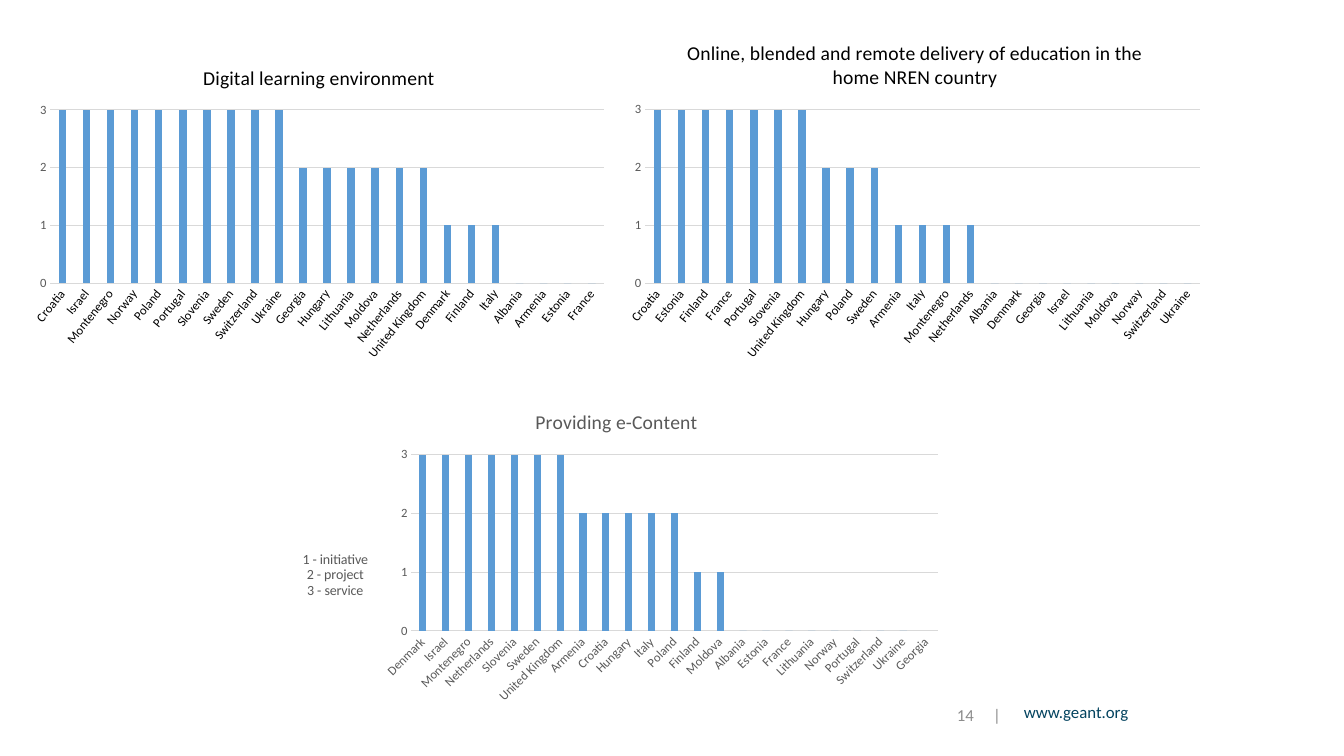
"""Build a slide with three country charts on education services and a footer."""
from lxml import etree
from pptx import Presentation
from pptx.chart.data import CategoryChartData
from pptx.dml.color import RGBColor
from pptx.enum.chart import XL_CHART_TYPE, XL_TICK_MARK
from pptx.enum.text import MSO_ANCHOR, PP_ALIGN
from pptx.oxml.ns import qn
from pptx.util import Inches, Pt

COLUMNS = XL_CHART_TYPE.COLUMN_CLUSTERED
NO_TICK = XL_TICK_MARK.NONE
TOP, MIDDLE = MSO_ANCHOR.TOP, MSO_ANCHOR.MIDDLE
LEFT, RIGHT = PP_ALIGN.LEFT, PP_ALIGN.RIGHT
BLACK = RGBColor(0x00, 0x00, 0x00)
GRAY = RGBColor(0x59, 0x59, 0x59)
GRID = RGBColor(0xD9, 0xD9, 0xD9)
BLUE = RGBColor(0x5B, 0x9B, 0xD5)
NAVY = RGBColor(0x03, 0x43, 0x5F)
FOOTER_GRAY = RGBColor(0x8C, 0x8C, 0x8C)
FONT = "Calibri"
MAX_LEVEL = 3

CHARTS = [
    {
        "title": "Digital learning environment",
        "box": (0.21, 0.49, 5.91, 3.15),
        "plot": (0.5, 1.09, 5.49, 1.72),
        "color": BLACK,
        "angle": -51,
        "levels": [
            (3, "Croatia, Israel, Montenegro, Norway, Poland, Portugal, Slovenia, "
                "Sweden, Switzerland, Ukraine"),
            (2, "Georgia, Hungary, Lithuania, Moldova, Netherlands, United Kingdom"),
            (1, "Denmark, Finland, Italy"),
            (0, "Albania, Armenia, Estonia, France"),
        ],
    },
    {
        "title": "Online, blended and remote delivery of education in the home NREN country",
        "box": (6.12, 0.23, 5.91, 3.41),
        "plot": (6.4, 1.09, 5.5, 1.72),
        "color": BLACK,
        "angle": -51,
        "levels": [
            (3, "Croatia, Estonia, Finland, France, Portugal, Slovenia, United Kingdom"),
            (2, "Hungary, Poland, Sweden"),
            (1, "Armenia, Italy, Montenegro, Netherlands"),
            (0, "Albania, Denmark, Georgia, Israel, Lithuania, Moldova, Norway, "
                "Switzerland, Ukraine"),
        ],
    },
    {
        "title": "Providing e-Content",
        "box": (2.79, 3.9, 6.65, 3.15),
        "plot": (4.08, 4.51, 5.22, 1.75),
        "color": GRAY,
        "angle": -45,
        "levels": [
            (3, "Denmark, Israel, Montenegro, Netherlands, Slovenia, Sweden, United Kingdom"),
            (2, "Armenia, Croatia, Hungary, Italy, Poland"),
            (1, "Finland, Moldova"),
            (0, "Albania, Estonia, France, Lithuania, Norway, Portugal, Switzerland, Ukraine"),
            (None, "Georgia"),
        ],
        "key": "1 - initiative\n2 - project\n3 - service",
        "key_at": (2.97, 5.42),
    },
]
FOOTERS = [
    {"text": "www.geant.org", "box": (9.61, 6.91, 1.68, 0.36), "color": NAVY,
     "align": RIGHT, "anchor": TOP, "insets": (0.1, 0.1)},
    {"text": "14\t|", "box": (9.29, 6.91, 0.73, 0.36), "color": FOOTER_GRAY,
     "align": LEFT, "anchor": MIDDLE, "insets": (0.2, 0), "tab": 0.36},
]


def set_values(target, **values):
    for name, value in values.items():
        setattr(target, name, value)


def set_font(font, size, color):
    set_values(font, name=FONT, size=Pt(size), bold=False)
    font.color.rgb = color


def set_line(line, color):
    line.color.rgb = color
    line.width = Pt(0.75)


def set_title(title, text, size, color):
    title.text_frame.text = text
    for paragraph in title.text_frame.paragraphs:
        set_font(paragraph.font, size, color)


def set_layout(parent, position, chart_box, inner=False):
    """Place a chart part at a slide position given in inches."""
    old = parent.find(qn("c:layout"))
    index = 0
    if old is not None:
        index = parent.index(old)
        parent.remove(old)
    layout = etree.Element(qn("c:layout"))
    manual = etree.SubElement(layout, qn("c:manualLayout"))
    left, top, width, height = chart_box
    fractions = [(position[0] - left) / width, (position[1] - top) / height]
    fractions += [size / whole for size, whole in zip(position[2:], (width, height))]
    settings = [("layoutTarget", "inner")] if inner else []
    settings += [("xMode", "edge"), ("yMode", "edge")]
    settings += [(name, f"{part:.4f}") for name, part in zip("xywh", fractions)]
    for name, value in settings:
        etree.SubElement(manual, qn(f"c:{name}")).set("val", value)
    parent.insert(index, layout)


def add_level_chart(slide, spec):
    data = CategoryChartData()
    pairs = [(name, level) for level, names in spec["levels"] for name in names.split(", ")]
    data.categories = [name for name, level in pairs]
    data.add_series(spec["title"], [level for name, level in pairs])
    chart = slide.shapes.add_chart(COLUMNS, *map(Inches, spec["box"]), data).chart
    set_font(chart.font, 10, BLACK)
    set_values(chart, has_legend=False, has_title=True)
    set_title(chart.chart_title, spec["title"], 14, spec["color"])

    plot = chart.plots[0]
    set_values(plot, gap_width=219, overlap=-27, vary_by_categories=False)
    fill = plot.series[0].format.fill
    fill.solid()
    fill.fore_color.rgb = BLUE

    countries, levels = chart.category_axis, chart.value_axis
    for axis, color in ((countries, spec["color"]), (levels, GRAY)):
        set_values(axis, major_tick_mark=NO_TICK, minor_tick_mark=NO_TICK)
        set_font(axis.tick_labels.font, 9, color)
    set_line(countries.format.line, GRID)
    label_body = countries._element.find(qn("c:txPr")).find(qn("a:bodyPr"))
    label_body.set("rot", str(spec["angle"] * 60000))
    label_body.set("vert", "horz")
    set_values(levels, minimum_scale=0, maximum_scale=MAX_LEVEL, major_unit=1,
               has_major_gridlines=True)
    set_line(levels.major_gridlines.format.line, GRID)
    levels.format.line.fill.background()

    plot_area = chart._chartSpace.find(f".//{qn('c:plotArea')}")
    set_layout(plot_area, spec["plot"], spec["box"], inner=True)
    if "key" in spec:
        key = levels.axis_title
        set_title(key, spec["key"], 10, GRAY)
        key_body = key._element.find(f".//{qn('a:bodyPr')}")
        key_body.set("rot", "0")
        key_body.set("vert", "horz")
        set_layout(key._element, spec["key_at"], spec["box"])


def add_footer(slide, spec):
    frame = slide.shapes.add_textbox(*map(Inches, spec["box"])).text_frame
    left, right = map(Inches, spec["insets"])
    set_values(frame, word_wrap=True, vertical_anchor=spec["anchor"],
               margin_left=left, margin_right=right)
    paragraph = frame.paragraphs[0]
    paragraph.text = spec["text"]
    paragraph.alignment = spec["align"]
    if "tab" in spec:
        tabs = etree.SubElement(paragraph._p.get_or_add_pPr(), qn("a:tabLst"))
        tab = etree.SubElement(tabs, qn("a:tab"))
        tab.set("pos", str(Inches(spec["tab"])))
        tab.set("algn", "l")
    set_font(paragraph.font, 12, spec["color"])


def main():
    presentation = Presentation()
    set_values(presentation, slide_width=Inches(13.33), slide_height=Inches(7.5))
    slide = presentation.slides.add_slide(presentation.slide_layouts[6])
    for spec in FOOTERS:
        add_footer(slide, spec)
    for spec in CHARTS:
        add_level_chart(slide, spec)
    presentation.save("out.pptx")


if __name__ == "__main__":
    main()
